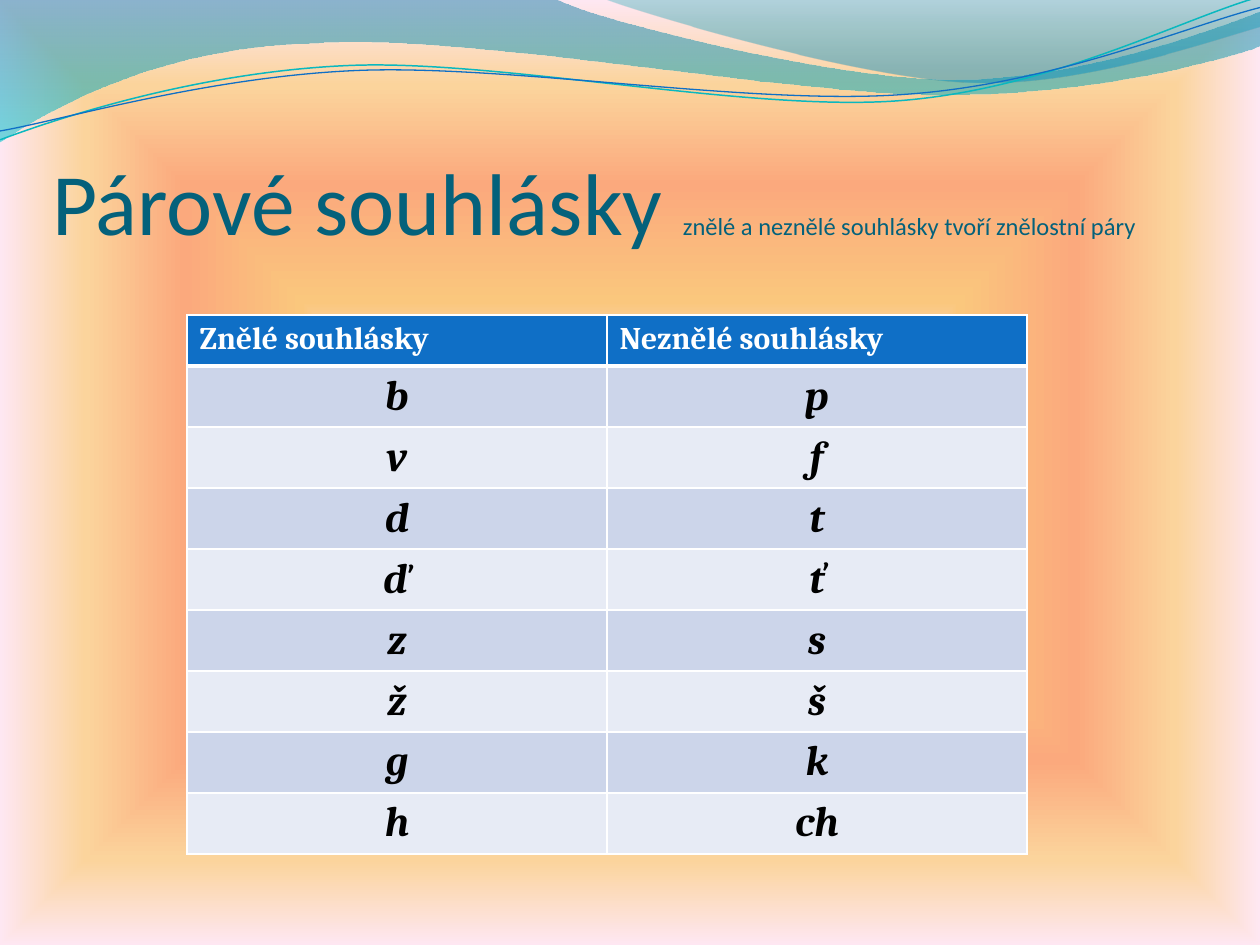
from dataclasses import dataclass
from math import cos, radians, sin

from lxml import etree
from pptx import Presentation
from pptx.dml.color import RGBColor as Rgb
from pptx.enum.text import MSO_ANCHOR as Anchor, MSO_AUTO_SIZE as Auto, PP_ALIGN as Align
from pptx.oxml import parse_xml
from pptx.oxml.ns import nsdecls, qn
from pptx.util import Cm, Pt

UNIT = 2.54  # curve points below are in inches
TILT = 2.7   # degrees the two strands lean to the left


@dataclass(frozen=True)
class Theme:
    head: str = "Calibri"
    body: str = "Cambria"
    ink: str = "04617B"
    blue: str = "0F6FC6"
    teal: str = "0AB8BF"
    white: str = "FFFFFF"
    black: str = "000000"
    bands: tuple = ("CCD5EA", "E7EBF5")
    big: int = 50
    note: int = 14
    top: int = 18
    cell: int = 24


# Gradient stops: position, colour, opacity
GLOW = [(0, "FBEAC7", 100), (18, "FEE7F2", 100), (36, "FAC77D", 100),
        (61, "FBA97D", 100), (82, "FBD49C", 100), (100, "FEE7F2", 100)]
DEEP = [(0, "0074A1", 45), (100, "00C6CF", 55)]
PALE = [(0, "00A1A9", 30), (80, "008BBF", 45)]
FROM_MID = ('<a:path path="shape"><a:fillToRect l="50000" t="50000" '
            'r="50000" b="50000"/></a:path>')
DOWN = '<a:lin ang="5400000" scaled="1"/>'

# Curves: a start point, then steps of two (line) or six (Bezier) numbers
WIDE = [(0, 0), (4.4, -0.01), (4.76, 0.17, 6.64, 0.63, 7.58, 0.63),
        (8.53, 0.63, 9.58, 0.26, 10, 0.09), (10.01, 0.36),
        (9.83, 0.44, 8.7, 0.76, 7.46, 0.75), (6.22, 0.75, 3.82, 0.28, 2.57, 0.34),
        (1.29, 0.36, 0.46, 0.83, -0.01, 1.13)]
SIDE = [(4.79, -0.01), (5.09, 0.11, 6.82, 0.62, 7.69, 0.65),
        (8.56, 0.69, 9.61, 0.32, 10, 0.21), (10, 0)]
HIGH = [(0, 1.11), (0.48, 0.93, 1.58, 0.57, 2.77, 0.52),
        (3.95, 0.47, 5.93, 0.89, 7.13, 0.8), (8.33, 0.71, 9.38, 0.15, 9.98, -0.02)]
LOW = [(0, 1.04), (0.47, 0.96, 1.64, 0.61, 2.83, 0.56),
       (4.03, 0.51, 5.97, 0.84, 7.17, 0.75), (8.36, 0.67, 9.41, 0.21, 10, 0.06)]

PAIRS = [("b", "p"), ("v", "f"), ("d", "t"), ("ď", "ť"),
         ("z", "s"), ("ž", "š"), ("g", "k"), ("h", "ch")]


def turn(point, mid, angle):
    """Turn a point clockwise about a middle."""
    x, y = point[0] - mid[0], point[1] - mid[1]
    c, s = cos(radians(angle)), sin(radians(angle))
    return mid[0] + x * c - y * s, mid[1] + x * s + y * c


class Page:
    def __init__(self, deck, theme):
        self.theme = theme
        self.slide = deck.slides.add_slide(deck.slide_layouts[5])

    def blend(self, owner, stops, way):
        """Swap the solid fill of an element for a gradient."""
        marks = "".join(
            f'<a:gs pos="{pos * 1000}"><a:srgbClr val="{tone}">'
            f'<a:alpha val="{alpha * 1000}"/></a:srgbClr></a:gs>'
            for pos, tone, alpha in stops)
        grad = parse_xml(f'<a:gradFill {nsdecls("a")} rotWithShape="1">'
                         f'<a:gsLst>{marks}</a:gsLst>{way}</a:gradFill>')
        owner.replace(owner.find(qn("a:solidFill")), grad)

    def back(self, stops):
        self.slide.background.fill.solid()
        self.blend(self.slide.element.find(".//" + qn("p:bgPr")), stops, FROM_MID)

    def curve(self, steps, close, mid=(0, 0), angle=0):
        """Build the outline from its end points, then bend the Bezier steps."""
        moves = []
        for step in steps:
            points = [turn(p, mid, angle) for p in zip(step[::2], step[1::2])]
            moves.append([(Cm(x * UNIT), Cm(y * UNIT)) for x, y in points])
        ends = [move[-1] for move in moves]
        pen = self.slide.shapes.build_freeform(*ends[0])
        pen.add_line_segments(ends[1:], close=close)
        shape = pen.convert_to_shape()
        left, top = (min(axis) for axis in zip(*ends))
        lines = shape.element.spPr.findall(".//" + qn("a:lnTo"))
        for line, move in zip(lines, moves[1:]):
            if len(move) == 3:
                bend = etree.Element(qn("a:cubicBezTo"))
                for x, y in move:
                    etree.SubElement(bend, qn("a:pt"), x=str(x - left), y=str(y - top))
                line.getparent().replace(line, bend)
        shape.rotation = -angle
        shape.shadow.inherit = False
        return shape

    def wave(self, steps, stops):
        shape = self.curve(steps, True)
        shape.line.fill.background()
        shape.fill.solid()
        self.blend(shape.element.spPr, stops, DOWN)

    def strand(self, steps, mid, tone, width):
        shape = self.curve(steps, False, mid, TILT)
        shape.fill.background()
        shape.line.color.rgb = Rgb.from_string(tone)
        shape.line.width = Pt(width)

    def run(self, para, text, face, size, tone, bold=False, slant=False):
        run = para.add_run()
        run.text = text
        font = run.font
        font.name, font.size = face, Pt(size)
        font.bold, font.italic = bold, slant
        font.color.rgb = Rgb.from_string(tone)

    def title(self, parts):
        box = self.slide.shapes.title
        box.left, box.top, box.width, box.height = Cm(1.06), Cm(1.93), Cm(22.86), Cm(3.18)
        frame = box.text_frame
        frame.word_wrap, frame.auto_size = True, Auto.NONE
        frame.vertical_anchor = Anchor.BOTTOM
        frame.margin_left = frame.margin_right = frame.margin_bottom = 0
        frame.margin_top = Cm(0.13)
        para = frame.paragraphs[0]
        para.alignment = Align.LEFT
        for text, size in parts:
            self.run(para, text, self.theme.head, size, self.theme.ink)

    def edge(self, cell, low):
        """Draw white cell borders; low is the width of the bottom one."""
        props = cell._tc.get_or_add_tcPr()
        for spot, (side, width) in enumerate(zip("LRTB", (1, 1, 1, low))):
            line = etree.Element(qn(f"a:ln{side}"), w=str(Pt(width)))
            fill = etree.SubElement(line, qn("a:solidFill"))
            etree.SubElement(fill, qn("a:srgbClr"), val=self.theme.white)
            props.insert(spot, line)

    def table(self, heads, pairs):
        theme = self.theme
        rows = [heads, *pairs]
        frame = self.slide.shapes.add_table(len(rows), len(heads), Cm(3.77), Cm(6.35),
                                            Cm(16.93), Cm(11.2))
        grid = frame.table
        grid.horz_banding = False
        for r, words in enumerate(rows):
            grid.rows[r].height = Cm(1.03)
            for c, word in enumerate(words):
                cell = grid.cell(r, c)
                para = cell.text_frame.paragraphs[0]
                cell.fill.solid()
                if r == 0:
                    tone = theme.blue
                    self.run(para, word, theme.body, theme.top, theme.white, True)
                else:
                    tone = theme.bands[(r - 1) % 2]
                    para.alignment = Align.CENTER
                    self.run(para, word, theme.body, theme.cell, theme.black, True, True)
                cell.fill.fore_color.rgb = Rgb.from_string(tone)
                self.edge(cell, 1 if r else 3)
        frame.height = Cm(11.2)


def main():
    deck = Presentation()
    deck.slide_width, deck.slide_height = Cm(25.4), Cm(19.05)
    theme = Theme()
    page = Page(deck, theme)

    # Backdrop and waves
    page.back(GLOW)
    page.wave(WIDE, DEEP)
    page.wave(SIDE, PALE)
    page.strand(HIGH, (4.99, 0.58), theme.teal, 0.85)
    page.strand(LOW, (5, 0.59), theme.blue, 0.75)

    # Title and table of consonant pairs
    page.title([("Párové souhlásky ", theme.big),
                ("znělé a neznělé souhlásky tvoří znělostní páry", theme.note)])
    page.table(("Znělé souhlásky", "Neznělé souhlásky"), PAIRS)
    deck.save("out.pptx")


if __name__ == "__main__":
    main()
